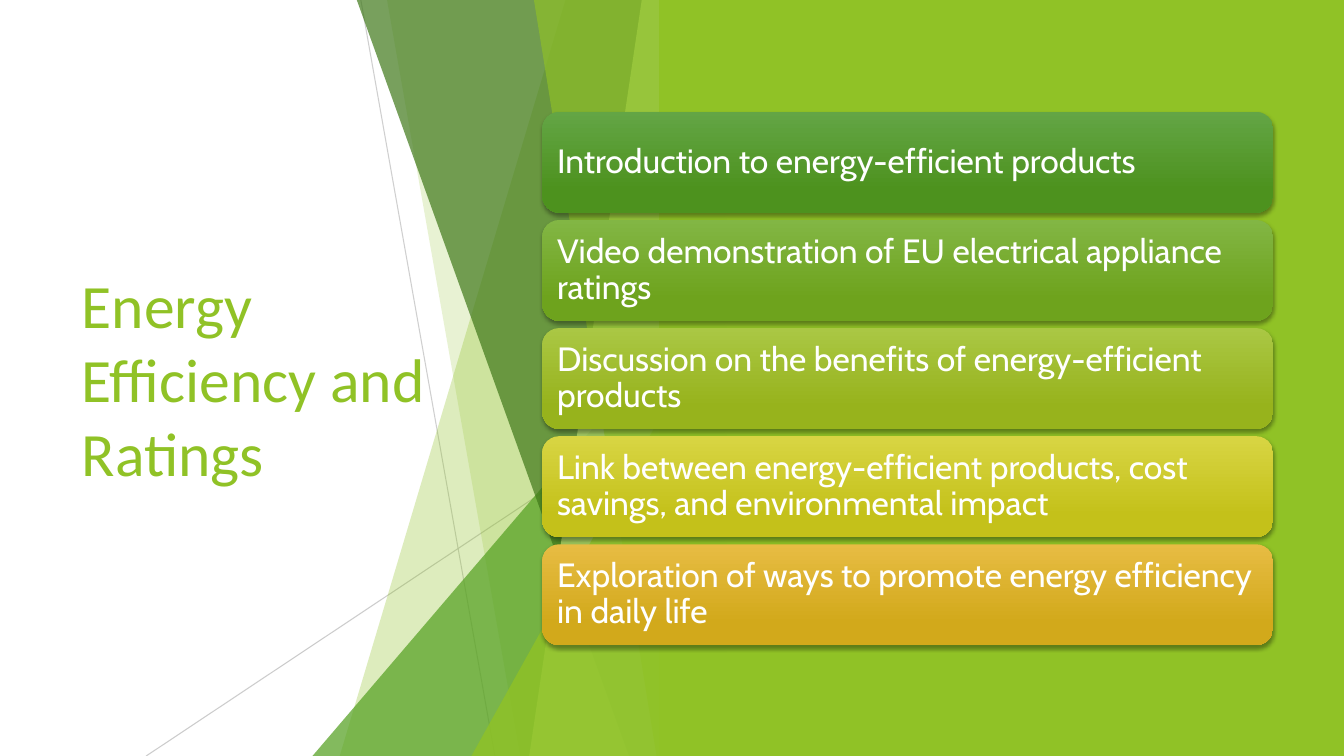
from dataclasses import dataclass

from lxml.etree import SubElement
from pptx import Presentation
from pptx.dml.color import RGBColor
from pptx.enum.shapes import MSO_CONNECTOR, MSO_SHAPE as Shape
from pptx.enum.text import MSO_ANCHOR as Anchor, MSO_AUTO_SIZE as AutoSize, PP_ALIGN as Align
from pptx.oxml.ns import qn
from pptx.util import Inches, Pt

WIDTH, HEIGHT = Inches(13.33), Inches(7.5)
COLUMNS, ROWS = 40, 30
SEAM = 20  # column where the facets end
LIME, WHITE = "90C226", "FFFFFF"


@dataclass
class Ray:
    start: tuple[float, float]
    end: tuple[float, float]
    opacity: int


@dataclass
class Facet:
    """A full-height pane from a slanted left edge to the seam."""
    top_column: float
    foot_column: float
    color: str
    opacity: int


@dataclass
class Wedge:
    """A right triangle that rises to the seam."""
    column: float
    row: float
    color: str
    opacity: int


@dataclass
class Card:
    text: str
    light: str
    deep: str


RAYS = [Ray((10.74, 0), (14.73, ROWS), 75), Ray((SEAM, 16.12), (4.35, ROWS), 80)]
PANES = [
    Facet(16.83, 10.11, LIME, 30),
    Facet(11.52, 15.48, LIME, 20),
    Wedge(9.3, 13.32, "54A021", 72),
    Facet(10.62, 18.72, "3F7819", 70),
    Facet(19.1, 15.75, "C0E474", 70),
    Facet(15.89, 19.54, LIME, 65),
    Wedge(14.03, 15.72, LIME, 80),
]
CARDS = [
    Card("Introduction to energy-efficient products", "63A545", "4D921E"),
    Card("Video demonstration of EU electrical appliance ratings", "82B644", "6EA31D"),
    Card("Discussion on the benefits of energy-efficient products", "AAC744", "97B31C"),
    Card("Link between energy-efficient products, cost savings, and environmental impact",
         "D8D543", "C4C11A"),
    Card("Exploration of ways to promote energy efficiency in daily life", "E7BC43", "D2A91B"),
]
CARD_LEFT, CARD_TOP, CARD_WIDTH, CARD_HEIGHT, CARD_PITCH = 16.14, 4.44, 21.75, 4, 4.29


def x(column: float) -> int:
    return round(WIDTH * column / COLUMNS)


def y(row: float) -> int:
    return round(HEIGHT * row / ROWS)


def rgb(color: str) -> RGBColor:
    return RGBColor.from_string(color)


def set_opacity(shape, percent: int) -> None:
    for color in shape._element.spPr.iter(qn("a:srgbClr")):
        SubElement(color, qn("a:alpha"), val=str(percent * 1000))


def add_block(page, kind: Shape, column: float, row: float, columns: float, rows: float):
    shape = page.shapes.add_shape(kind, x(column), y(row), x(columns), y(rows))
    shape.shadow.inherit = False
    shape.line.fill.background()
    return shape


def paint(shape, color: str) -> None:
    shape.fill.solid()
    shape.fill.fore_color.rgb = rgb(color)


def add_ray(page, ray: Ray) -> None:
    line = page.shapes.add_connector(
        MSO_CONNECTOR.STRAIGHT, x(ray.start[0]), y(ray.start[1]), x(ray.end[0]), y(ray.end[1]))
    line.line.color.rgb = rgb("BFBFBF")
    line.line.width = Pt(0.75)
    set_opacity(line, ray.opacity)
    SubElement(line._element.spPr, qn("a:effectLst"))


def add_pane(page, pane: Facet | Wedge) -> None:
    if isinstance(pane, Wedge):
        shape = add_block(page, Shape.ISOSCELES_TRIANGLE, pane.column, pane.row,
                          SEAM - pane.column, ROWS - pane.row)
        shape.adjustments[0] = 1
    else:
        outline = page.shapes.build_freeform(x(pane.top_column), 0)
        outline.add_line_segments(
            [(x(SEAM), 0), (x(SEAM), HEIGHT), (x(pane.foot_column), HEIGHT)], close=True)
        shape = outline.convert_to_shape()
        shape.shadow.inherit = False
        shape.line.fill.background()
    paint(shape, pane.color)
    set_opacity(shape, pane.opacity)


def add_card(page, card: Card, row: float) -> None:
    box = add_block(page, Shape.ROUNDED_RECTANGLE, CARD_LEFT, row, CARD_WIDTH, CARD_HEIGHT)
    box.fill.gradient()
    box.fill.gradient_angle = 270
    for stop, position, color in zip(box.fill.gradient_stops, (0, 0.78), (card.light, card.deep)):
        stop.position = position
        stop.color.rgb = rgb(color)

    # Soft shadow below the card
    effects = box._element.spPr.find(qn("a:effectLst"))
    shadow = SubElement(effects, qn("a:outerShdw"), blurRad=str(Pt(3)), dist=str(Pt(2)),
                        dir="5400000", algn="ctr", rotWithShape="0")
    black = SubElement(shadow, qn("a:srgbClr"), val="000000")
    SubElement(black, qn("a:alpha"), val="35000")

    frame = box.text_frame
    frame.word_wrap = True
    frame.vertical_anchor = Anchor.MIDDLE
    frame.margin_left = frame.margin_right = frame.margin_top = frame.margin_bottom = Inches(0.1)
    write(frame, card.text, "Cabin", 24, WHITE)
    frame.paragraphs[0].line_spacing = 0.9


def write(frame, text: str, font: str, size: int, color: str) -> None:
    para = frame.paragraphs[0]
    para.text = text
    para.alignment = Align.LEFT
    para.font.name = font
    para.font.size = Pt(size)
    para.font.color.rgb = rgb(color)


def add_title(page, text: str) -> None:
    title = page.shapes.title
    title.left, title.top, title.width, title.height = x(2.13), y(6.04), x(11.64), y(17.92)
    title.text_frame.word_wrap = True
    title.text_frame.auto_size = AutoSize.NONE
    title.text_frame.vertical_anchor = Anchor.MIDDLE
    write(title.text_frame, text, "Calibri", 44, LIME)


def main() -> None:
    deck = Presentation()
    deck.slide_width, deck.slide_height = WIDTH, HEIGHT
    page = deck.slides.add_slide(deck.slide_layouts[5])
    page.background.fill.solid()
    page.background.fill.fore_color.rgb = rgb(WHITE)
    add_title(page, "Energy Efficiency and Ratings")

    # Faceted backdrop
    for ray in RAYS:
        add_ray(page, ray)
    for pane in PANES:
        add_pane(page, pane)
    paint(add_block(page, Shape.RECTANGLE, 19.62, 0, COLUMNS - 19.62, ROWS), LIME)

    # Agenda cards
    for index, card in enumerate(CARDS):
        add_card(page, card, CARD_TOP + index * CARD_PITCH)

    deck.save("out.pptx")


if __name__ == "__main__":
    main()
